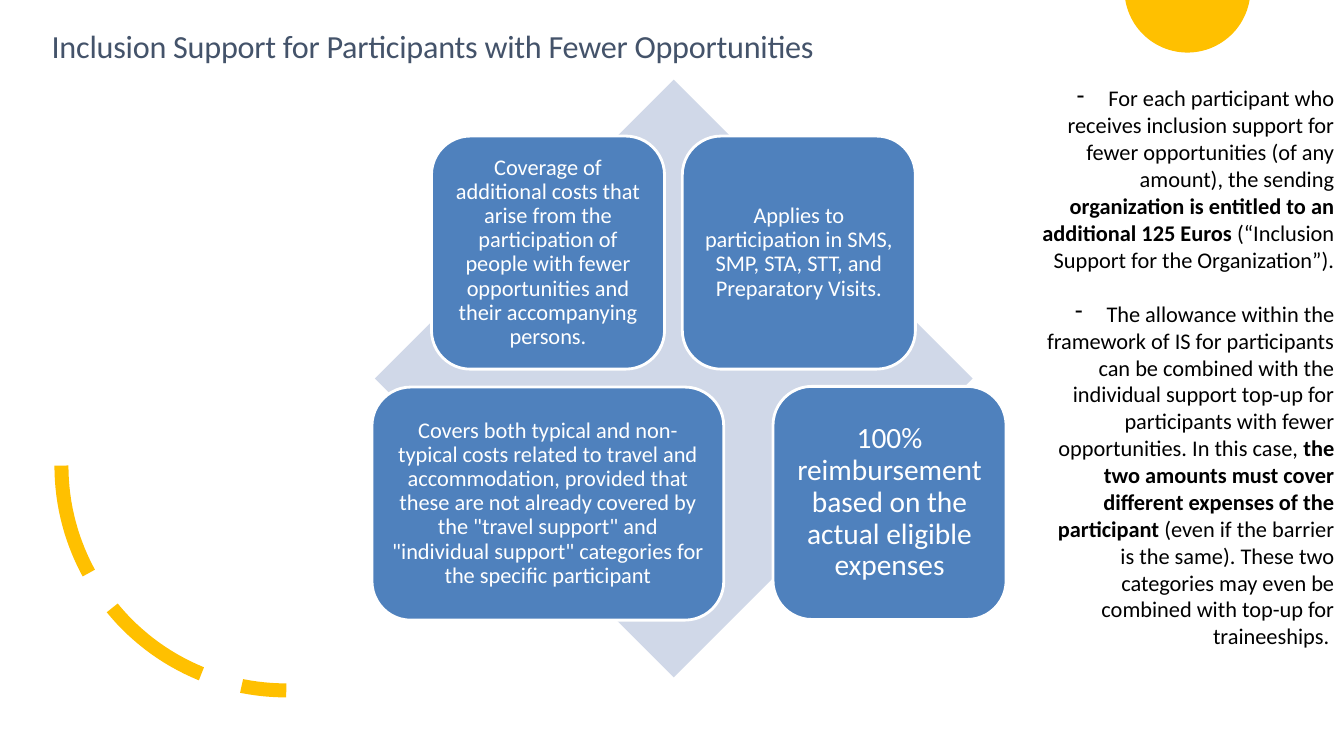
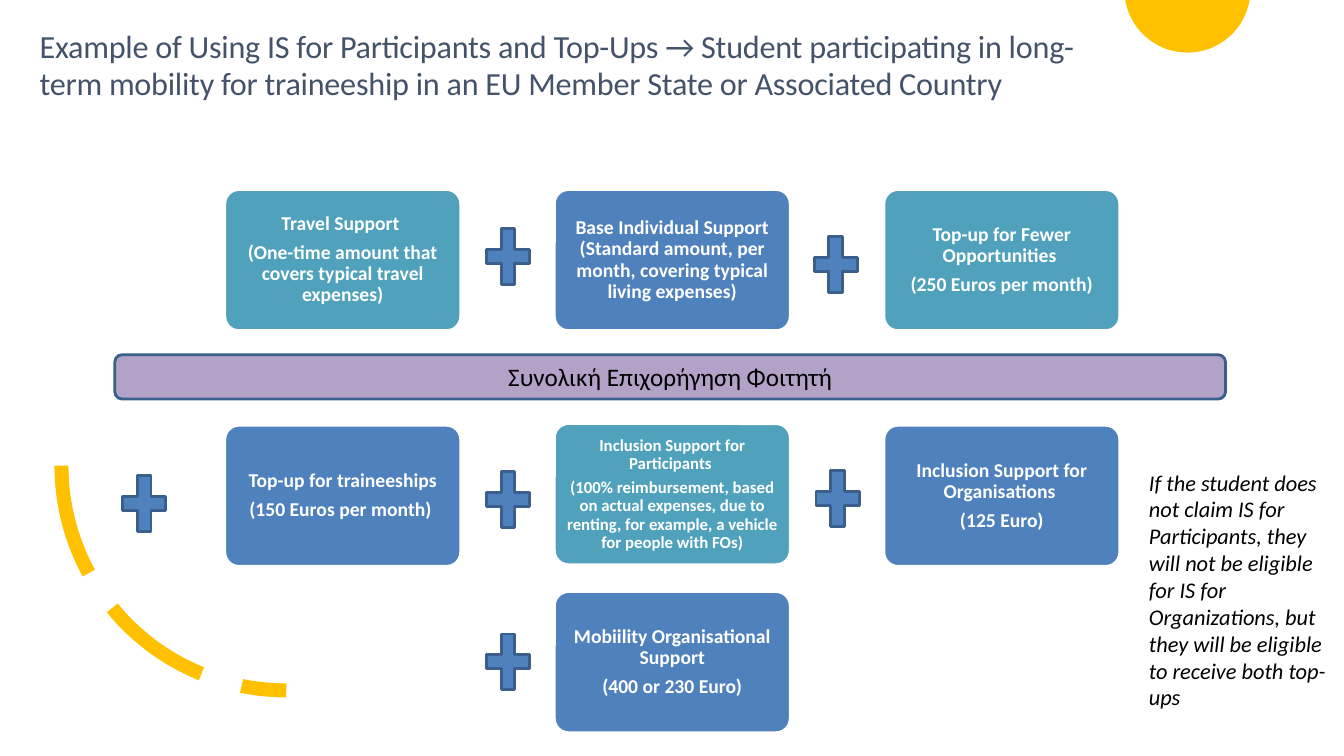
from dataclasses import dataclass
from math import asin, cos, pi, sin

from lxml import etree
from pptx import Presentation
from pptx.dml.color import RGBColor
from pptx.enum.dml import MSO_LINE
from pptx.enum.shapes import MSO_SHAPE
from pptx.enum.text import MSO_ANCHOR, PP_ALIGN
from pptx.oxml.ns import qn
from pptx.shapes.autoshape import Shape
from pptx.slide import Slide
from pptx.text.text import TextFrame
from pptx.util import Pt

ROUND, PLUS, DIAMOND = MSO_SHAPE.ROUNDED_RECTANGLE, MSO_SHAPE.MATH_PLUS, MSO_SHAPE.DIAMOND
LEFT, RIGHT, CENTER = PP_ALIGN.LEFT, PP_ALIGN.RIGHT, PP_ALIGN.CENTER
MIDDLE, DASH = MSO_ANCHOR.MIDDLE, MSO_LINE.LONG_DASH


# Theme: colours, font and type sizes
@dataclass(frozen=True)
class Theme:
    font: str = "Calibri"
    gold: str = "FFC000"
    slate: str = "44536A"
    blue: str = "4F81BD"
    teal: str = "50A2BC"
    pale: str = "D0D8E8"
    lilac: str = "B3A2C7"
    edge: str = "3A5F8C"
    white: str = "FFFFFF"
    black: str = "000000"
    head: float = 23
    large: float = 21
    bar: float = 18
    body: float = 16
    card: float = 14
    small: float = 12


T = Theme()


@dataclass(frozen=True)
class Box:
    x: float
    y: float
    w: float
    h: float


@dataclass(frozen=True)
class Run:
    text: str
    bold: bool = False
    ital: bool = False


@dataclass(frozen=True)
class Style:
    size: float
    color: str
    align: PP_ALIGN = LEFT
    lines: float | Pt | None = None
    before: float = 0
    after: float = 0
    track: int = 0
    dash: bool = False


@dataclass(frozen=True)
class Card:
    box: Box
    texts: tuple[str, ...]
    fill: str = T.blue
    size: float = T.card
    inset: float = 4.3
    bold: bool = True
    adj: float = 0.1


Para = tuple[Run, ...]


# Text
def write(frame: TextFrame, paras: list[Para], style: Style) -> None:
    frame.word_wrap = True
    for i, runs in enumerate(paras):
        para = frame.add_paragraph() if i else frame.paragraphs[0]
        para.alignment = style.align
        para.line_spacing = style.lines
        # list items are set apart by spacing; other text uses it from the top
        para.space_before = Pt(style.before if i or not style.dash else 0)
        para.space_after = Pt(style.after)
        if style.dash:
            props = para._p.get_or_add_pPr()
            props.set("marL", str(Pt(22.5)))
            props.set("indent", str(-Pt(22.5)))
            etree.SubElement(props, qn("a:buChar")).set("char", "-")
        for item in runs:
            run = para.add_run()
            run.text = item.text
            font = run.font
            font.name, font.size = T.font, Pt(style.size)
            font.bold, font.italic = item.bold, item.ital
            font.color.rgb = RGBColor.from_string(style.color)
            if style.track:
                run._r.get_or_add_rPr().set("spc", str(style.track))


def pad(frame: TextFrame, left: float, top: float, right: float, base: float) -> None:
    frame.margin_left, frame.margin_top = Pt(left), Pt(top)
    frame.margin_right, frame.margin_bottom = Pt(right), Pt(base)


def label(slide: Slide, box: Box, paras: list[Para], style: Style) -> TextFrame:
    area = slide.shapes.add_textbox(Pt(box.x), Pt(box.y), Pt(box.w), Pt(box.h))
    write(area.text_frame, paras, style)
    return area.text_frame


# Shapes
def paint(shape: Shape, fill: str | None, line: str | None, width: float = 2) -> None:
    shape.shadow.inherit = False
    if fill:
        shape.fill.solid()
        shape.fill.fore_color.rgb = RGBColor.from_string(fill)
    else:
        shape.fill.background()
    if line:
        shape.line.color.rgb = RGBColor.from_string(line)
        shape.line.width = Pt(width)
    else:
        shape.line.fill.background()


def block(slide: Slide, kind: MSO_SHAPE, box: Box, fill: str, line: str | None) -> Shape:
    shape = slide.shapes.add_shape(kind, Pt(box.x), Pt(box.y), Pt(box.w), Pt(box.h))
    paint(shape, fill, line)
    return shape


def draw(slide: Slide, card: Card) -> None:
    shape = block(slide, ROUND, card.box, card.fill, T.white)
    shape.adjustments[0] = card.adj
    frame = shape.text_frame
    pad(frame, *[card.inset] * 4)
    frame.vertical_anchor = MIDDLE
    style = Style(card.size, T.white, CENTER, 0.9, after=round(card.size * 0.38, 1))
    write(frame, [(Run(text, card.bold),) for text in card.texts], style)


def curve(slide: Slide, x: float, y: float, rad: float, start: float, end: float,
          close: bool) -> Shape:
    steps = 48
    turns = [start + (end - start) * i / steps for i in range(steps + 1)]
    dots = [(Pt(x + rad * cos(a)), Pt(y + rad * sin(a))) for a in turns]
    path = slide.shapes.build_freeform(*dots[0])
    path.add_line_segments(dots[1:], close=close)
    return path.convert_to_shape()


# Shared frame: gold disc, dashed arc and title
def base(deck: Presentation, title: str, box: Box) -> Slide:
    slide = deck.slides.add_slide(deck.slide_layouts[6])
    cut = asin(7.4 / 45)
    paint(curve(slide, 848.2, -7.4, 45, cut, pi - cut, True), T.gold, None)
    arc = curve(slide, 204.5, 332.6, 160.6, pi, pi / 2, False)
    paint(arc, None, T.gold, 10)
    arc.line.dash_style = DASH
    style = Style(T.head, T.slate, lines=Pt(26.4), before=1, track=-20)
    pad(label(slide, box, [(Run(title),)], style), 0.9, 0.9, 0, 0)
    return slide


# Slide 1: inclusion support
def support(deck: Presentation) -> None:
    slide = base(deck, "Inclusion Support for Participants with Fewer Opportunities",
                 Box(36, 19.4, 580, 27.4))
    block(slide, DIAMOND, Box(267.8, 56.9, 427, 427), T.pale, None)
    side = 166.5
    tiles = [
        (Box(308.2, 97.2, side, side), T.body, 5,
         "Coverage of additional costs that arise from the participation of people with "
         "fewer opportunities and their accompanying persons."),
        (Box(487.4, 97.2, side, side), T.body, 5,
         "Applies to participation in SMS, SMP, STA, STT, and Preparatory Visits."),
        (Box(265.7, 276.5, 251.3, side), T.body, 5,
         "Covers both typical and non-typical costs related to travel and accommodation, "
         "provided that these are not already covered by the \"travel support\" and "
         "\"individual support\" categories for the specific participant"),
        (Box(552.2, 276, side, side), T.large, 6.5,
         "100% reimbursement based on the actual eligible expenses"),
    ]
    for box, size, inset, text in tiles:
        draw(slide, Card(box, (text,), T.blue, size, inset, False, 0.1667))
    notes = [
        (Run("For each participant who receives inclusion support for fewer opportunities "
             "(of any amount), the sending "),
         Run("organization is entitled to an additional 125 Euros", True),
         Run(" (“Inclusion Support for the Organization”).")),
        (Run("The allowance within the framework of IS for participants can be combined with "
             "the individual support top-up for participants with fewer opportunities. "
             "In this case, "),
         Run("the two amounts must cover different expenses of the participant ", True),
         Run("(even if the barrier is the same). These two categories may even be combined "
             "with top-up for traineeships. ")),
    ]
    label(slide, Box(714.2, 56.9, 246, 433.4), notes,
          Style(T.body, T.black, RIGHT, before=19.5, dash=True))


# Slide 2: worked example
def example(deck: Presentation) -> None:
    slide = base(deck, "Example of Using IS for Participants and Top-Ups → Student "
                 "participating in long-term mobility for traineeship in an EU Member State "
                 "or Associated Country", Box(27.4, 19.4, 776.2, 53.3))

    def cell(col: int, y: float) -> Box:
        return Box(160.6 + 235.4 * col, y, 168.5, 100.8)

    cards = [
        Card(cell(0, 135.4), ("Travel Support ",
             "(One-time amount that covers typical travel expenses)"), T.teal),
        Card(cell(1, 135.4), ("Base Individual Support (Standard amount, per month, "
                              "covering typical living expenses)",)),
        Card(cell(2, 135.4), ("Top-up for Fewer Opportunities ",
                              "(250 Euros per month)"), T.teal),
        Card(cell(0, 303.8), ("Top-up for traineeships", "(150 Euros per month) ")),
        Card(cell(1, 302.6), ("Inclusion Support for Participants ",
             "(100% reimbursement, based on actual expenses, due to renting, for example, "
             "a vehicle for people with FOs)"), T.teal, T.small, 3.6),
        Card(cell(2, 303.8), ("Inclusion Support for Organisations ", "(125 Euro)")),
        Card(cell(1, 422.6), ("Mobiility Organisational Support", "(400 or 230 Euro)"),
             inset=3.6),
    ]
    for card in cards:
        draw(slide, card)
    spots = [(342, 156.2), (576, 162), (82, 332.6), (342, 329.8), (577.4, 329), (342, 445.7)]
    for x, y in spots:
        block(slide, PLUS, Box(x, y, 41.8, 54), T.blue, T.edge)

    # Total grant bar and side note
    bar = block(slide, ROUND, Box(82, 253.4, 793.4, 31.7), T.lilac, T.edge)
    bar.text_frame.vertical_anchor = MIDDLE
    write(bar.text_frame, [(Run("Συνολική Επιχορήγηση Φοιτητή"),)],
          Style(T.bar, T.black, CENTER))
    label(slide, Box(813.6, 331.2, 144, 181.4),
          [(Run("If the student does not claim IS for Participants, they will not be eligible "
                "for IS for Organizations, but they will be eligible to receive both top-ups",
                ital=True),)], Style(T.body, T.black))


def main() -> None:
    deck = Presentation()
    deck.slide_width, deck.slide_height = Pt(960), Pt(540)
    support(deck)
    example(deck)
    deck.save("out.pptx")


if __name__ == "__main__":
    main()
